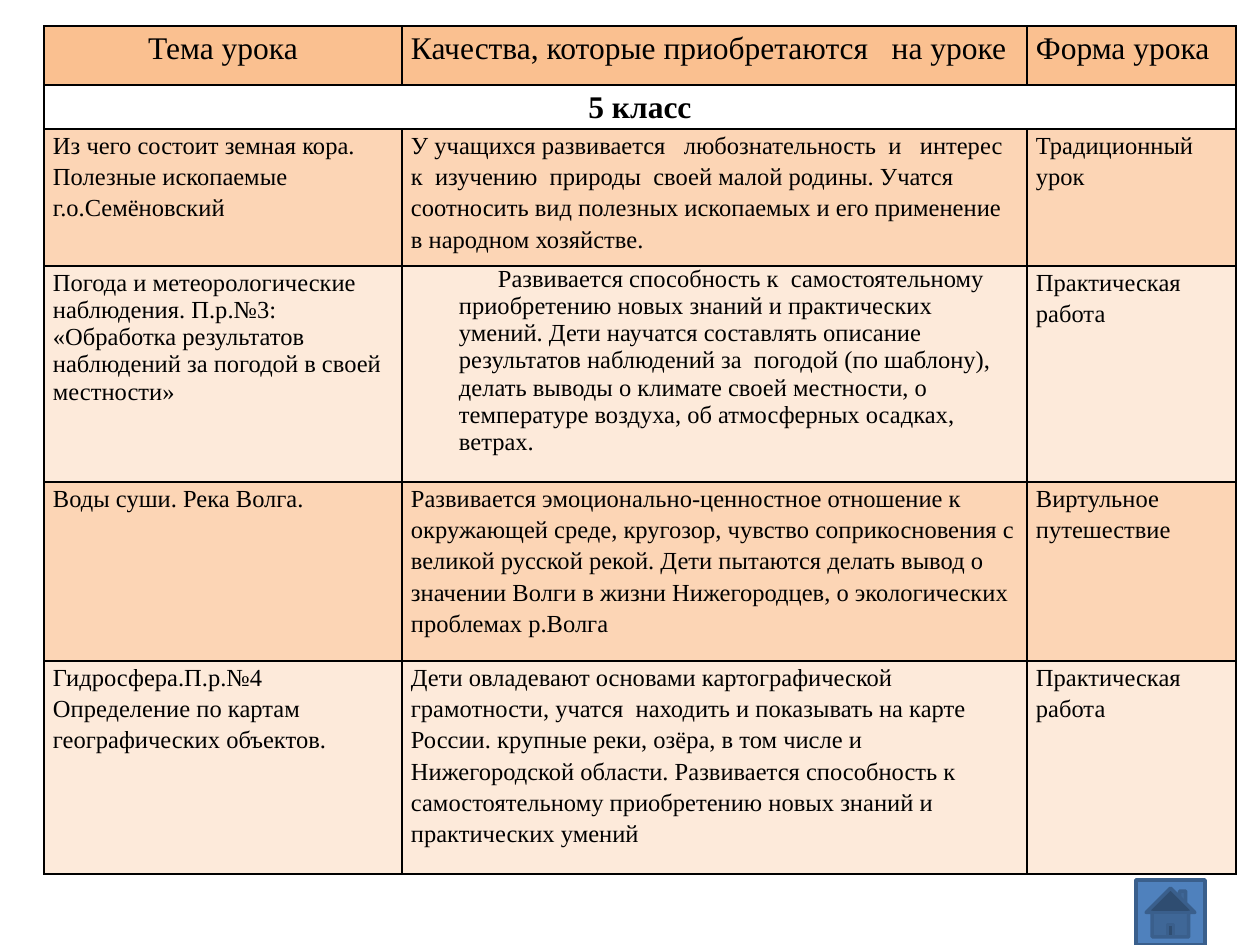
import dataclasses
import typing

import lxml.etree
import pptx
import pptx.dml.color
import pptx.enum.shapes
import pptx.enum.text
import pptx.oxml.ns
import pptx.util

SCALE = 914400 / 126
FONT = "Times New Roman"
INK = "000000"
HEAD, DARK, LIGHT = "FAC090", "FCD5B5", "FDEADA"
COLS = [358, 625, 209]
PAD = 9


@dataclasses.dataclass
class Para:
    text: str
    lead: float = 1.15
    left: int = 0
    first: int = 0
    mid: bool = False


@dataclasses.dataclass
class Row:
    high: int
    fill: typing.Optional[str]
    cells: list[list[Para]]
    size: int = 14
    bold: bool = False


ROWS = [
    Row(59, HEAD, [
        [Para("Тема урока", mid=True)],
        [Para("Качества, которые приобретаются   на уроке")],
        [Para("Форма урока")],
    ], size=18),
    Row(44, None, [[Para("5 класс", mid=True)]], size=18, bold=True),
    Row(137, DARK, [
        [Para("Из чего состоит земная кора. Полезные ископаемые г.о.Семёновский")],
        [Para("У учащихся развивается   любознательность  и   интерес  к  изучению  "
              "природы  своей малой родины. Учатся соотносить вид полезных ископаемых "
              "и его применение в народном хозяйстве.")],
        [Para("Традиционный урок")],
    ]),
    Row(216, LIGHT, [
        [Para("Погода и метеорологические"),
         Para("наблюдения. П.р.№3: «Обработка результатов наблюдений за погодой "
              "в своей местности»", lead=1.0)],
        [Para("Развивается способность к  самостоятельному приобретению новых знаний "
              "и практических умений. Дети научатся составлять описание результатов "
              "наблюдений за  погодой (по шаблону), делать выводы о климате своей "
              "местности, о температуре воздуха, об атмосферных осадках, ветрах.",
              lead=1.0, left=48, first=39)],
        [Para("Практическая работа")],
    ]),
    Row(179, DARK, [
        [Para("Воды суши. Река Волга.")],
        [Para("Развивается эмоционально-ценностное отношение к окружающей среде, "
              "кругозор, чувство соприкосновения с великой русской рекой. Дети "
              "пытаются делать вывод о значении Волги в жизни Нижегородцев, "
              "о экологических проблемах р.Волга")],
        [Para("Виртульное путешествие")],
    ]),
    Row(213, LIGHT, [
        [Para("Гидросфера.П.р.№4  Определение по картам географических объектов.")],
        [Para("Дети овладевают основами картографической грамотности, учатся  находить "
              "и показывать на карте России. крупные реки, озёра, в том числе и "
              "Нижегородской области. Развивается способность к  самостоятельному "
              "приобретению новых знаний и практических умений")],
        [Para("Практическая работа")],
    ]),
]


def px(n: int) -> pptx.util.Emu:
    return pptx.util.Emu(round(n * SCALE))


def paint(fill, tone: typing.Optional[str]) -> None:
    if tone is None:
        fill.background()
        return
    fill.solid()
    fill.fore_color.rgb = pptx.dml.color.RGBColor.from_string(tone)


def frame(cell) -> None:
    """Draw a thin border on all four sides; borders go before the fill."""
    props = cell._tc.get_or_add_tcPr()
    name = pptx.oxml.ns.qn
    for spot, side in enumerate(("a:lnL", "a:lnR", "a:lnT", "a:lnB")):
        line = lxml.etree.Element(name(side), w=str(pptx.util.Pt(1)))
        solid = lxml.etree.SubElement(line, name("a:solidFill"))
        lxml.etree.SubElement(solid, name("a:srgbClr"), val=INK)
        props.insert(spot, line)


def write(cell, paras: list[Para], row: Row) -> None:
    cell.margin_left = cell.margin_right = px(PAD)
    cell.margin_top = cell.margin_bottom = 0
    align = pptx.enum.text.PP_ALIGN
    body = cell.text_frame
    for num, item in enumerate(paras):
        para = body.add_paragraph() if num else body.paragraphs[0]
        para.alignment = align.CENTER if item.mid else align.LEFT
        para.line_spacing = item.lead
        if item.left:
            props = para._p.get_or_add_pPr()
            props.set("marL", str(px(item.left)))
            props.set("indent", str(px(item.first)))
        run = para.add_run()
        run.text = item.text
        run.font.name = FONT
        run.font.size = pptx.util.Pt(row.size)
        run.font.bold = row.bold
        paint(run.font.fill, INK)


def grid(slide) -> None:
    high = sum(row.high for row in ROWS)
    table = slide.shapes.add_table(
        len(ROWS), len(COLS), px(44), px(26), px(sum(COLS)), px(high)).table
    table.first_row = table.horz_banding = False
    for col, wide in zip(table.columns, COLS):
        col.width = px(wide)
    for num, row in enumerate(ROWS):
        table.rows[num].height = px(row.high)
        for pos in range(len(COLS)):
            cell = table.cell(num, pos)
            paint(cell.fill, row.fill)
            frame(cell)
        for pos, paras in enumerate(row.cells):
            write(table.cell(num, pos), paras, row)
        # A lone cell takes the whole row
        if len(row.cells) == 1:
            table.cell(num, 0).merge(table.cell(num, len(COLS) - 1))


def button(slide) -> None:
    kind = pptx.enum.shapes.MSO_SHAPE.ACTION_BUTTON_HOME
    home = slide.shapes.add_shape(kind, px(1136), px(880), px(69), px(65))
    home.shadow.inherit = False
    paint(home.fill, "4F81BD")
    paint(home.line.fill, "3A5F8C")
    home.line.width = pptx.util.Pt(2)


def main() -> None:
    deck = pptx.Presentation()
    deck.slide_width, deck.slide_height = px(1260), px(945)
    slide = deck.slides.add_slide(deck.slide_layouts[6])
    # Lesson table
    grid(slide)
    # Home button
    button(slide)
    deck.save("out.pptx")


if __name__ == "__main__":
    main()
